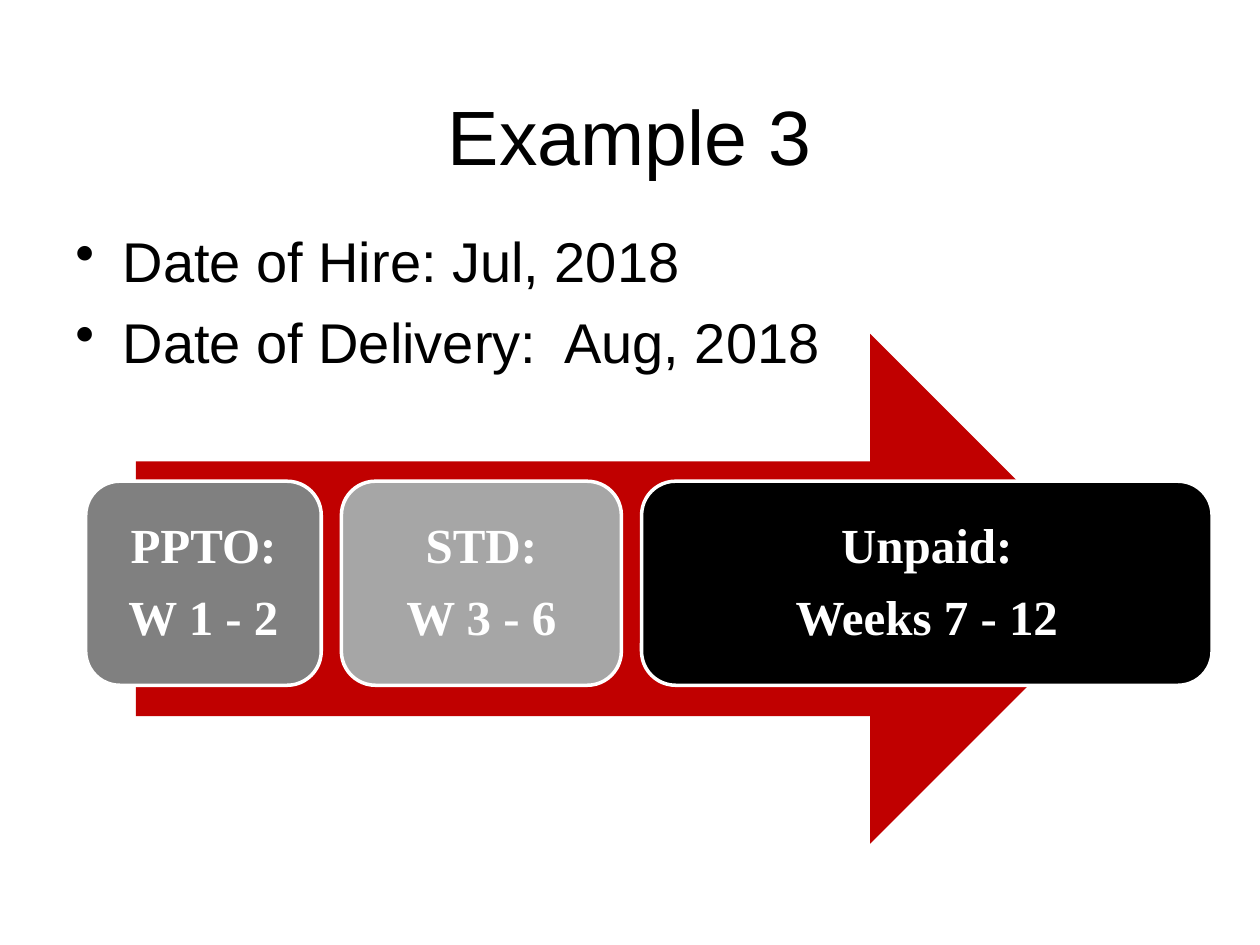
"""Build the "Example 3" slide: two dates above a leave timeline on an arrow."""
import pptx
import pptx.dml.color
import pptx.enum.shapes
import pptx.enum.text
import pptx.oxml.ns
import pptx.util
from lxml import etree

Pt = pptx.util.Pt
SHAPE = pptx.enum.shapes.MSO_SHAPE
ALIGN = pptx.enum.text.PP_ALIGN
ANCHOR = pptx.enum.text.MSO_ANCHOR


def color(hex_value):
    return pptx.dml.color.RGBColor.from_string(hex_value)


def apply_formats(target, formats):
    for name, value in formats.items():
        setattr(target, name, value)


class LeaveSlide:
    title_font = {"name": "Arial", "size": Pt(44)}
    date_font = {"name": "Arial", "size": Pt(32)}
    phase_font = {"name": "Times New Roman", "size": Pt(28), "bold": True}
    bullet_indent = Pt(27)

    def __init__(self, presentation):
        self.slide = presentation.slides.add_slide(presentation.slide_layouts[6])

    def fill_text(self, frame, lines, font, ink, gap=0, bullet=False, **formats):
        frame.word_wrap = True
        for index, line in enumerate(lines):
            paragraph = frame.paragraphs[0] if index == 0 else frame.add_paragraph()
            paragraph.text = line
            if bullet:
                self.add_bullet(paragraph)
            apply_formats(paragraph, formats)
            apply_formats(paragraph.font, font)
            paragraph.font.color.rgb = color(ink)
            if index:
                paragraph.space_before = Pt(gap)

    def add_bullet(self, paragraph):
        properties = paragraph._p.get_or_add_pPr()
        properties.set("marL", str(int(self.bullet_indent)))
        properties.set("indent", str(-int(self.bullet_indent)))
        mark = etree.SubElement(properties, pptx.oxml.ns.qn("a:buChar"))
        mark.set("char", "•")

    def text_box(self, left, top, width, height):
        box = self.slide.shapes.add_textbox(Pt(left), Pt(top), Pt(width), Pt(height))
        return box.text_frame

    def title(self, text):
        frame = self.text_box(36, 43, 648, 68)
        frame.vertical_anchor = ANCHOR.MIDDLE
        self.fill_text(frame, [text], self.title_font, "000000", alignment=ALIGN.CENTER)

    def dates(self, lines):
        frame = self.text_box(36, 126, 648, 325)
        self.fill_text(frame, lines, self.date_font, "000000", gap=7.5, bullet=True)

    def shape(self, kind, left, top, width, height, fill):
        shape = self.slide.shapes.add_shape(kind, Pt(left), Pt(top), Pt(width), Pt(height))
        shape.shadow.inherit = False
        shape.fill.solid()
        shape.fill.fore_color.rgb = color(fill)
        shape.line.fill.background()
        return shape

    def arrow(self):
        self.shape(SHAPE.RIGHT_ARROW, 77.7, 190.8, 565.2, 291.3, "C00000")

    def phase(self, left, width, fill, lines):
        box = self.shape(SHAPE.ROUNDED_RECTANGLE, left, 275, width, 116.6, fill)
        box.line.color.rgb = color("FFFFFF")
        box.line.width = Pt(2)
        box.text_frame.vertical_anchor = ANCHOR.MIDDLE
        self.fill_text(box.text_frame, lines, self.phase_font, "FFFFFF", gap=11,
                       alignment=ALIGN.CENTER, line_spacing=0.9)

    def timeline(self, phases, left=49, gap=11.5):
        self.arrow()
        for width, fill, lines in phases:
            self.phase(left, width, fill, lines)
            left += width + gap


def main():
    presentation = pptx.Presentation()
    apply_formats(presentation, {"slide_width": Pt(720), "slide_height": Pt(540)})
    example = LeaveSlide(presentation)
    example.title("Example 3")
    example.dates(["Date of Hire: Jul, 2018", "Date of Delivery:  Aug, 2018"])
    example.timeline([
        (134.6, "808080", ["PPTO:", "W 1 - 2"]),
        (160, "A6A6A6", ["STD:", "W 3 - 6"]),
        (326, "000000", ["Unpaid:", "Weeks 7 - 12"]),
    ])
    presentation.save("out.pptx")


if __name__ == "__main__":
    main()
